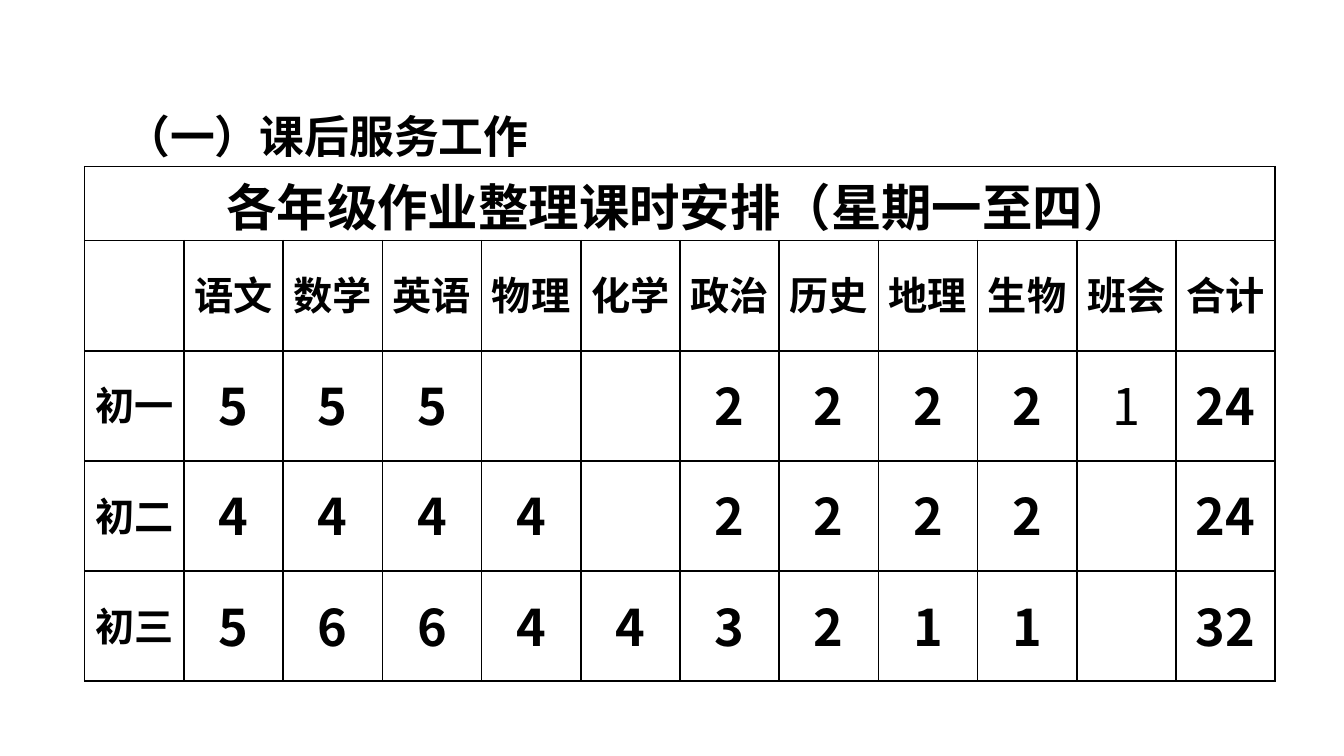
import dataclasses
import typing

import lxml.etree
import pptx
import pptx.dml.color
import pptx.enum.text
import pptx.oxml.ns
import pptx.util

COLORS = {"ink": "000000"}
SLIDE_WIDTH = pptx.util.Inches(10)
SLIDE_HEIGHT = SLIDE_WIDTH * 9 // 16
SUBJECTS = ["语文", "数学", "英语", "物理", "化学", "政治", "历史", "地理", "生物", "班会"]


@dataclasses.dataclass(frozen=True)
class TextStyle:
    size: int
    latin: str
    east_asian: str
    bold: bool = True


@dataclasses.dataclass(frozen=True)
class Grade:
    name: str
    lessons: list[str]
    total: str


HEADING = TextStyle(24, "Noto Sans CJK KR", "Noto Sans CJK KR")
TITLE = TextStyle(27, "Arial", "Noto Sans CJK SC")
LABEL = TextStyle(21, "Arial", "Noto Sans CJK SC")
COUNT = TextStyle(27, "Noto Sans CJK SC", "Noto Sans CJK SC")
CLASS_MEETING = dataclasses.replace(COUNT, bold=False)

GRADES = [
    Grade("初一", ["5", "5", "5", "", "", "2", "2", "2", "2", "1"], "24"),
    Grade("初二", ["4", "4", "4", "4", "", "2", "2", "2", "2", ""], "24"),
    Grade("初三", ["5", "6", "6", "4", "4", "3", "2", "1", "1", ""], "32"),
]


def share(percent: float, length: int) -> int:
    return round(percent * length / 100)


def write(frame: typing.Any, text: str, style: TextStyle) -> None:
    frame.text = text
    for run in frame.paragraphs[0].runs:
        run.font.size = pptx.util.Pt(style.size)
        run.font.bold = style.bold
        run.font.name = style.latin
        run.font.color.rgb = pptx.dml.color.RGBColor.from_string(COLORS["ink"])
        east_asian = lxml.etree.SubElement(run.font._element, pptx.oxml.ns.qn("a:ea"))
        east_asian.set("typeface", style.east_asian)


def rule_cell(cell: typing.Any) -> None:
    cell.fill.background()
    properties = cell._tc.get_or_add_tcPr()
    for position, side in enumerate(("lnL", "lnR", "lnT", "lnB")):
        line = lxml.etree.Element(pptx.oxml.ns.qn(f"a:{side}"), w=str(pptx.util.Pt(1)))
        fill = lxml.etree.SubElement(line, pptx.oxml.ns.qn("a:solidFill"))
        lxml.etree.SubElement(fill, pptx.oxml.ns.qn("a:srgbClr"), val=COLORS["ink"])
        properties.insert(position, line)


def fill_cell(cell: typing.Any, text: str, style: TextStyle) -> None:
    rule_cell(cell)
    cell.margin_left = cell.margin_right = cell.margin_top = pptx.util.Inches(0.01)
    cell.margin_bottom = pptx.util.Inches(0.04)
    cell.vertical_anchor = pptx.enum.text.MSO_ANCHOR.MIDDLE
    if text:
        write(cell.text_frame, text, style)
        cell.text_frame.paragraphs[0].alignment = pptx.enum.text.PP_ALIGN.CENTER


def style_at(row: int, column: int) -> TextStyle:
    if row == 0:
        return TITLE
    if row == 1 or column == 0:
        return LABEL
    return CLASS_MEETING if column == len(SUBJECTS) else COUNT


def add_heading(slide: typing.Any, text: str) -> None:
    heading = slide.shapes.add_textbox(
        share(6.35, SLIDE_WIDTH), share(13.5, SLIDE_HEIGHT),
        share(87.3, SLIDE_WIDTH), share(8.9, SLIDE_HEIGHT),
    )
    frame = heading.text_frame
    frame.word_wrap = True
    frame.auto_size = pptx.enum.text.MSO_AUTO_SIZE.SHAPE_TO_FIT_TEXT
    write(frame, text, HEADING)
    paragraph_properties = frame.paragraphs[0]._p.get_or_add_pPr()
    paragraph_properties.set("indent", str(pptx.util.Inches(0.2)))


def add_timetable(slide: typing.Any, title: str) -> None:
    columns = len(SUBJECTS) + 2
    contents = [
        [title] + [""] * (columns - 1),
        ["", *SUBJECTS, "合计"],
        *[[grade.name, *grade.lessons, grade.total] for grade in GRADES],
    ]
    width = share(88.6, SLIDE_WIDTH)
    title_height = pptx.util.Inches(0.55)
    row_height = pptx.util.Inches(0.82)
    timetable = slide.shapes.add_table(
        len(contents), columns,
        share(6.3, SLIDE_WIDTH), share(22.05, SLIDE_HEIGHT),
        width, title_height + row_height * (len(contents) - 1),
    ).table
    timetable.first_row = False
    timetable.horz_banding = False
    for column in timetable.columns:
        column.width = width // columns
    for index, row in enumerate(timetable.rows):
        row.height = row_height if index else title_height
    timetable.cell(0, 0).merge(timetable.cell(0, columns - 1))
    for row, texts in enumerate(contents):
        for column, text in enumerate(texts):
            fill_cell(timetable.cell(row, column), text, style_at(row, column))


def main() -> None:
    presentation = pptx.Presentation()
    presentation.slide_width = SLIDE_WIDTH
    presentation.slide_height = SLIDE_HEIGHT
    slide = presentation.slides.add_slide(presentation.slide_layouts[6])
    add_heading(slide, "（一）课后服务工作")
    add_timetable(slide, "各年级作业整理课时安排（星期一至四）")
    presentation.save("out.pptx")


if __name__ == "__main__":
    main()
